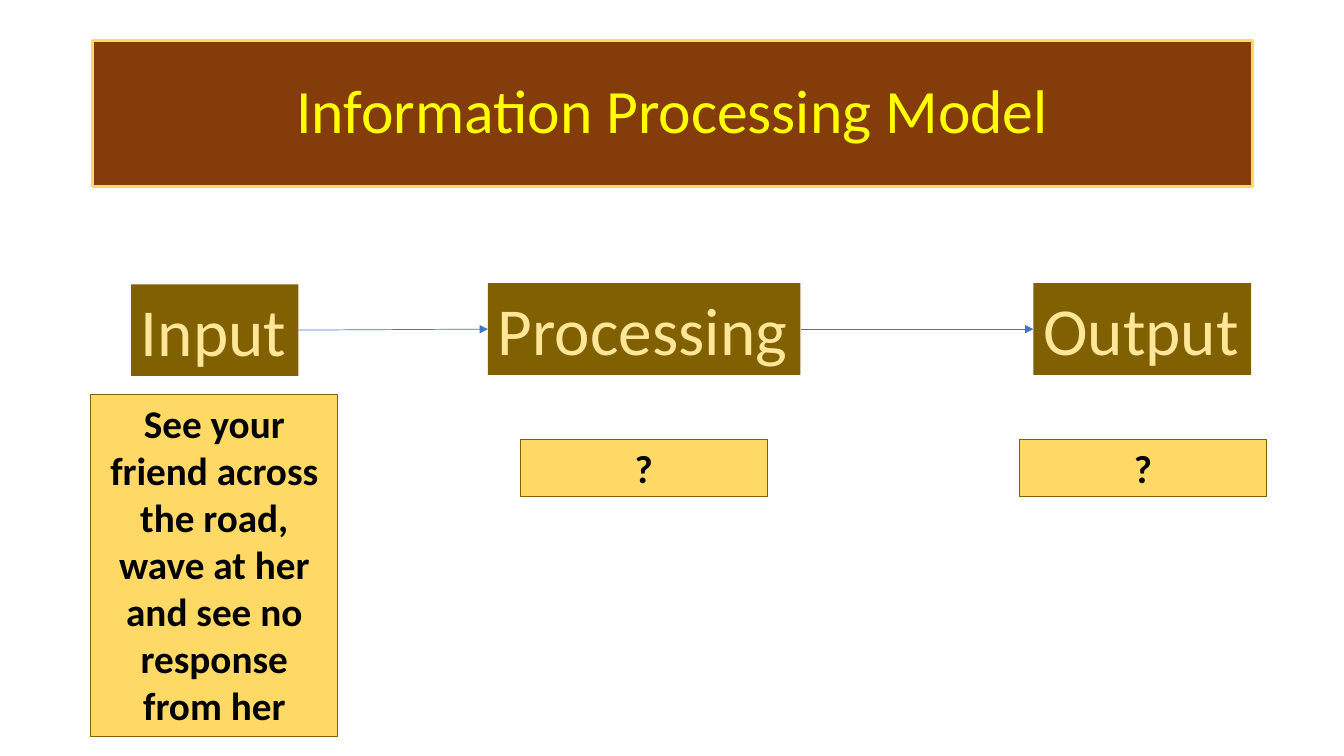
from lxml import etree
from pptx import Presentation
from pptx.dml.color import RGBColor
from pptx.enum.shapes import MSO_CONNECTOR as Connector, MSO_SHAPE as Shape
from pptx.enum.text import MSO_ANCHOR as Anchor, MSO_AUTO_SIZE as AutoSize, PP_ALIGN as Align
from pptx.oxml.ns import qn
from pptx.util import Inches, Pt

COLORS = {
    "brown": "843C0B", "gold": "FFD966", "yellow": "FFFF00", "olive": "806000",
    "cream": "FFE699", "black": "000000", "blue": "4472C4",
}


def color(name):
    return RGBColor.from_string(COLORS[name])


def add_box(page, at, text, size, fill, ink, line=None, weight=0.75, align=Align.CENTER):
    box = page.shapes.add_shape(Shape.RECTANGLE, *map(Inches, at))
    box.shadow.inherit = False
    box.fill.solid()
    box.fill.fore_color.rgb = color(fill)
    if line:
        box.line.color.rgb = color(line)
        box.line.width = Pt(weight)
    else:
        box.line.fill.background()
    frame = box.text_frame
    frame.word_wrap = True
    frame.vertical_anchor = Anchor.TOP
    para = frame.paragraphs[0]
    para.text = text
    para.alignment = align
    para.font.name = "Calibri"
    span = para.runs[0]
    span.font.name = "Calibri"
    span.font.size = Pt(size)
    span.font.color.rgb = color(ink)
    return box


deck = Presentation()
deck.slide_width, deck.slide_height = Inches(13.33), Inches(7.5)
page = deck.slides.add_slide(deck.slide_layouts[6])

# Title banner
title = add_box(page, (0.92, 0.4, 11.5, 1.45), "Information Processing Model", 44,
                "brown", "yellow", "gold", 2.25)
title.text_frame.vertical_anchor = Anchor.MIDDLE
title.text_frame.paragraphs[0].line_spacing = 0.9

# Stages of the model
stages = []
for text, left, top, width in [("Input", 1.3, 2.82, 1.66),
                               ("Processing", 4.84, 2.81, 3.1),
                               ("Output", 10.25, 2.81, 2.16)]:
    stage = add_box(page, (left, top, width, 0.91), text, 48, "olive", "cream", align=Align.LEFT)
    stage.text_frame.word_wrap = False
    stage.text_frame.auto_size = AutoSize.SHAPE_TO_FIT_TEXT
    stages.append(stage)

# Arrows from each stage to the next
for start, end in zip(stages, stages[1:]):
    arrow = page.shapes.add_connector(Connector.STRAIGHT, 0, 0, 0, 0)
    arrow.begin_connect(start, 3)
    arrow.end_connect(end, 1)
    arrow.line.color.rgb = color("blue")
    arrow.line.width = Pt(0.5)
    etree.SubElement(arrow.line._get_or_add_ln(), qn("a:tailEnd"), type="triangle")
    etree.SubElement(arrow._element.spPr, qn("a:effectLst"))

# Example under each stage
for text, left, top, height in [
    ("See your friend across the road, wave at her and see no response from her", 0.9, 3.91, 3.4),
    ("?", 5.16, 4.36, 0.57),
    ("?", 10.11, 4.36, 0.57),
]:
    example = add_box(page, (left, top, 2.45, height), text, 28, "gold", "black", "olive")
    example.text_frame.auto_size = AutoSize.SHAPE_TO_FIT_TEXT
    example.text_frame.paragraphs[0].runs[0].font.bold = True

deck.save("out.pptx")
